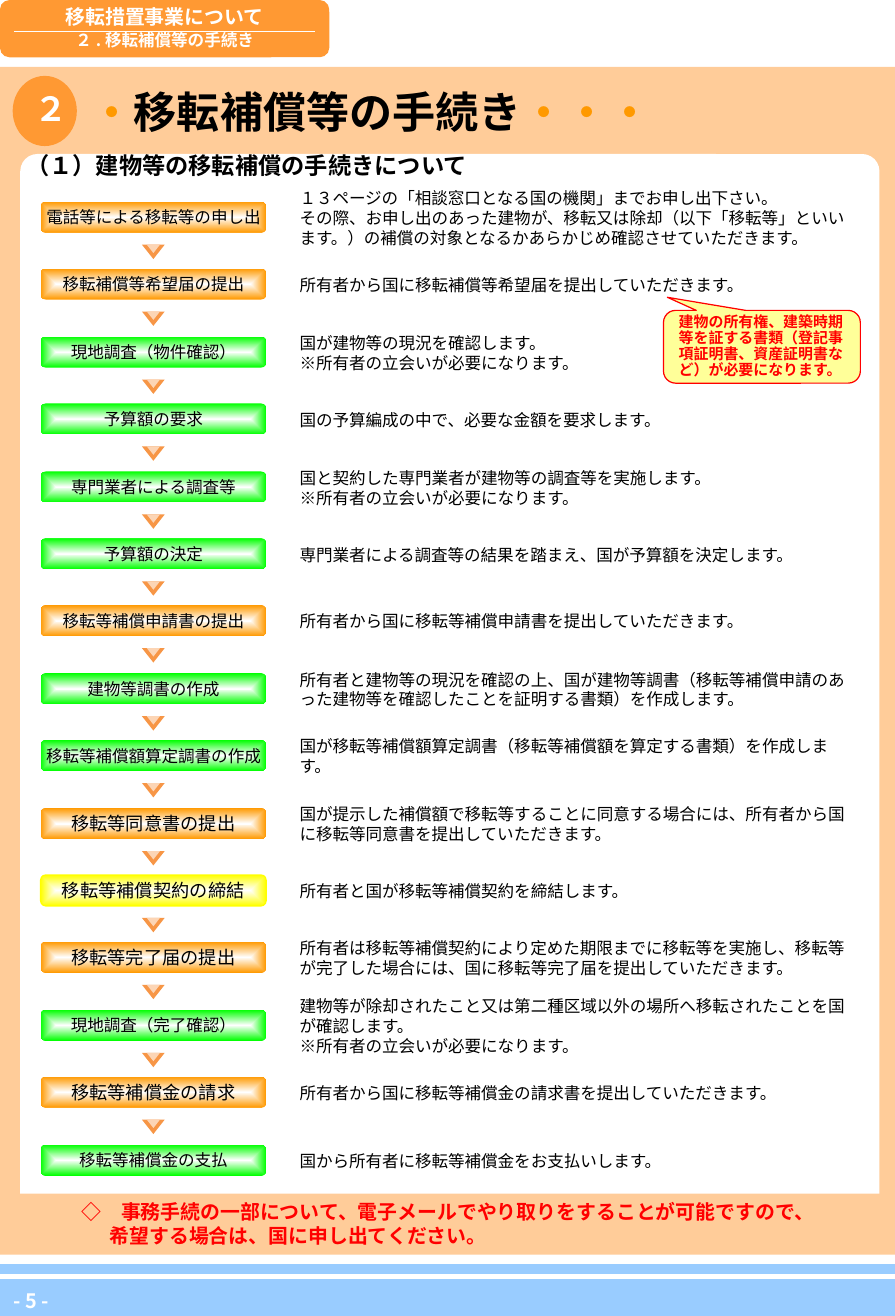
"""Build the slide that explains the relocation compensation procedure."""
from lxml import etree
from pptx import Presentation
from pptx import util as u
from pptx.dml.color import RGBColor
from pptx.enum import shapes, text
from pptx.oxml.ns import qn

PX = 9144
FONT = "Noto Sans CJK JP"
WHITE = RGBColor(0xFF, 0xFF, 0xFF)
BLACK = RGBColor(0, 0, 0)
RED = RGBColor(0xFF, 0, 0)
BLUE = RGBColor(0x99, 0xCC, 0xFF)
PEACH = RGBColor(0xFF, 0xCC, 0x99)
ORANGE = RGBColor(0xFF, 0x99, 0x33)
AMBER = RGBColor(0xFF, 0x99, 0)
GREEN = RGBColor(0, 0xFF, 0)
YELLOW = RGBColor(0xFF, 0xFF, 0)
CREAM = RGBColor(0xFF, 0xFF, 0x99)
ARROW = RGBColor(0xF7, 0x96, 0x46)
ARROW_LIGHT = RGBColor(0xFC, 0xD5, 0xB5)
KIND = shapes.MSO_SHAPE
CENTER = text.PP_ALIGN.CENTER
LEFT = text.PP_ALIGN.LEFT
MIDDLE = text.MSO_ANCHOR.MIDDLE

STEPS = [
    ("電話等による移転等の申し出", AMBER, 10,
     "１３ページの「相談窓口となる国の機関」までお申し出下さい。\n"
     "その際、お申し出のあった建物が、移転又は除却（以下「移転等」といい\n"
     "ます。）の補償の対象となるかあらかじめ確認させていただきます。"),
    ("移転補償等希望届の提出", AMBER, 10,
     "所有者から国に移転補償等希望届を提出していただきます。"),
    ("現地調査（物件確認）", GREEN, 10,
     "国が建物等の現況を確認します。\n※所有者の立会いが必要になります。"),
    ("予算額の要求", GREEN, 10, "国の予算編成の中で、必要な金額を要求します。"),
    ("専門業者による調査等", GREEN, 10,
     "国と契約した専門業者が建物等の調査等を実施します。\n※所有者の立会いが必要になります。"),
    ("予算額の決定", GREEN, 10, "専門業者による調査等の結果を踏まえ、国が予算額を決定します。"),
    ("移転等補償申請書の提出", AMBER, 10,
     "所有者から国に移転等補償申請書を提出していただきます。"),
    ("建物等調書の作成", GREEN, 10,
     "所有者と建物等の現況を確認の上、国が建物等調書（移転等補償申請のあ\n"
     "った建物等を確認したことを証明する書類）を作成します。"),
    ("移転等補償額算定調書の作成", GREEN, 10,
     "国が移転等補償額算定調書（移転等補償額を算定する書類）を作成しま\nす。"),
    ("移転等同意書の提出", AMBER, 11,
     "国が提示した補償額で移転等することに同意する場合には、所有者から国\n"
     "に移転等同意書を提出していただきます。"),
    ("移転等補償契約の締結", YELLOW, 11, "所有者と国が移転等補償契約を締結します。"),
    ("移転等完了届の提出", AMBER, 11,
     "所有者は移転等補償契約により定めた期限までに移転等を実施し、移転等\n"
     "が完了した場合には、国に移転等完了届を提出していただきます。"),
    ("現地調査（完了確認）", GREEN, 10,
     "建物等が除却されたこと又は第二種区域以外の場所へ移転されたことを国\n"
     "が確認します。\n※所有者の立会いが必要になります。"),
    ("移転等補償金の請求", AMBER, 11,
     "所有者から国に移転等補償金の請求書を提出していただきます。"),
    ("移転等補償金の支払", GREEN, 10, "国から所有者に移転等補償金をお支払いします。"),
]

deck = Presentation()
deck.slide_width, deck.slide_height = u.Emu(6858000), u.Emu(10080625)
page = deck.slides.add_slide(deck.slide_layouts[5])


def draw(kind, left, top, width, height, fill=None, line=None, weight=0.75):
    """Add a flat shape, or a text box when kind is None."""
    place = [round(n) * PX for n in (left, top, width, height)]
    if kind is None:
        return page.shapes.add_textbox(*place)
    shape = page.shapes.add_shape(kind, *place)
    shape.shadow.inherit = False
    shape.fill.solid()
    shape.fill.fore_color.rgb = fill
    if line is None:
        shape.line.fill.background()
    else:
        shape.line.color.rgb = line
        shape.line.width = u.Pt(weight)
    return shape


def write(shape, words, size, color, bold=True, align=CENTER, spacing=0.9, margin=None, wrap=True):
    """Fill a shape with vertically centred paragraphs of one style."""
    frame = shape.text_frame
    frame.text = words
    frame.word_wrap = wrap
    frame.vertical_anchor = MIDDLE
    if margin is not None:
        frame.margin_left = frame.margin_right = margin
        frame.margin_top = frame.margin_bottom = margin
    for para in frame.paragraphs:
        para.alignment = align
        para.line_spacing = spacing
        font = para.font
        font.size, font.bold, font.name = u.Pt(size), bold, FONT
        font.color.rgb = color
        etree.SubElement(font._element, qn("a:ea"), typeface=FONT)
    return frame


draw(KIND.RECTANGLE, 0, 1072, 750, 32, BLUE, BLUE)
draw(KIND.RECTANGLE, 0, 1059, 750, 8, BLUE, BLUE)
draw(KIND.RECTANGLE, 0, 56, 750, 994, PEACH)

title = page.shapes.title
page.shapes._spTree.append(title._element)
title.left, title.top, title.width, title.height = 66 * PX, 61 * PX, 643 * PX, 65 * PX
title.text_frame.vertical_anchor = MIDDLE
title_para = title.text_frame.paragraphs[0]
title_para.alignment = LEFT
for words, color in (("・", AMBER), ("移転補償等の手続き", BLACK), ("・・・", AMBER)):
    span = title_para.add_run()
    span.text = words
    span.font.size, span.font.bold, span.font.name = u.Pt(26), True, FONT
    span.font.color.rgb = color
    etree.SubElement(span.font._element, qn("a:ea"), typeface=FONT)

badge = draw(KIND.OVAL, 12, 65, 51, 56, ORANGE, ORANGE, 2)
write(badge, "２", 20, WHITE)
panel = draw(KIND.ROUNDED_RECTANGLE, 17, 129, 720, 902, WHITE)
panel.adjustments[0] = 0.02

tab = draw(KIND.ROUNDED_RECTANGLE, 0, 0, 276, 48, ORANGE)
tab_frame = write(tab, "移転措置事業について\n２.移転補償等の手続き", 12, WHITE, wrap=False)
tab_frame.paragraphs[1].font.size = u.Pt(10)
tab_frame.paragraphs[1].space_before = u.Pt(2)
rule = page.shapes.add_connector(
    shapes.MSO_CONNECTOR.STRAIGHT, 12 * PX, 26 * PX, 264 * PX, 26 * PX)
rule.line.color.rgb = WHITE
rule.line.width = u.Pt(0.5)
etree.SubElement(rule._element.spPr, qn("a:effectLst"))

write(draw(None, -8, 1079, 68, 24), "- 5 -", 12, WHITE, wrap=False)
heading = draw(None, 12, 125, 716, 30)
write(heading, "（１）建物等の移転補償の手続きについて", 14, BLACK, align=LEFT)

for index, (name, color, size, detail) in enumerate(STEPS):
    top = 169 + 56.4 * index
    outline = YELLOW if color == YELLOW else None
    box = draw(KIND.FLOWCHART_ALTERNATE_PROCESS, 34, top, 189, 26, color, outline)
    box.fill.gradient()
    for stop, shade in zip(box.fill.gradient_stops, (WHITE, color)):
        stop.color.rgb = shade
    gradient = box._element.spPr.find(qn("a:gradFill"))
    gradient.remove(gradient.find(qn("a:lin")))
    glow = etree.SubElement(gradient, qn("a:path"), path="shape")
    etree.SubElement(glow, qn("a:fillToRect"), l="50000", t="50000", r="50000", b="50000")
    write(box, name, size, BLACK, bold=False, spacing=1, margin=0)

    note = draw(None, 251, top - 5, 482, 37)
    write(note, detail, 10, BLACK, bold=False, align=LEFT, spacing=1, margin=0)

    if index < len(STEPS) - 1:
        for left, width, height, shade in ((119, 19, 12, ARROW), (123, 11, 7, ARROW_LIGHT)):
            arrow = draw(KIND.ISOSCELES_TRIANGLE, left, top + 36, width, height, shade)
            arrow.rotation = 180

callout = draw(KIND.ROUNDED_RECTANGULAR_CALLOUT, 556, 260, 165, 61, CREAM, RED)
callout.adjustments[0], callout.adjustments[1] = -0.48, -0.68
write(callout, "建物の所有権、建築時期等を証する書類（登記事項証明書、資産証明書など）が必要になります。",
      9, RED, align=LEFT)

footer = draw(KIND.RECTANGLE, 0, 1000, 751, 51, PEACH)
footer_frame = write(
    footer,
    "◇　事務手続の一部について、電子メールでやり取りをすることが可能ですので、\n"
    "希望する場合は、国に申し出てください。",
    12, RED, spacing=1)
footer_frame.vertical_anchor = text.MSO_ANCHOR.TOP
request = footer_frame.paragraphs[1]
request.alignment = LEFT
request._p.get_or_add_pPr().set("marL", str(82 * PX))

deck.save("out.pptx")
